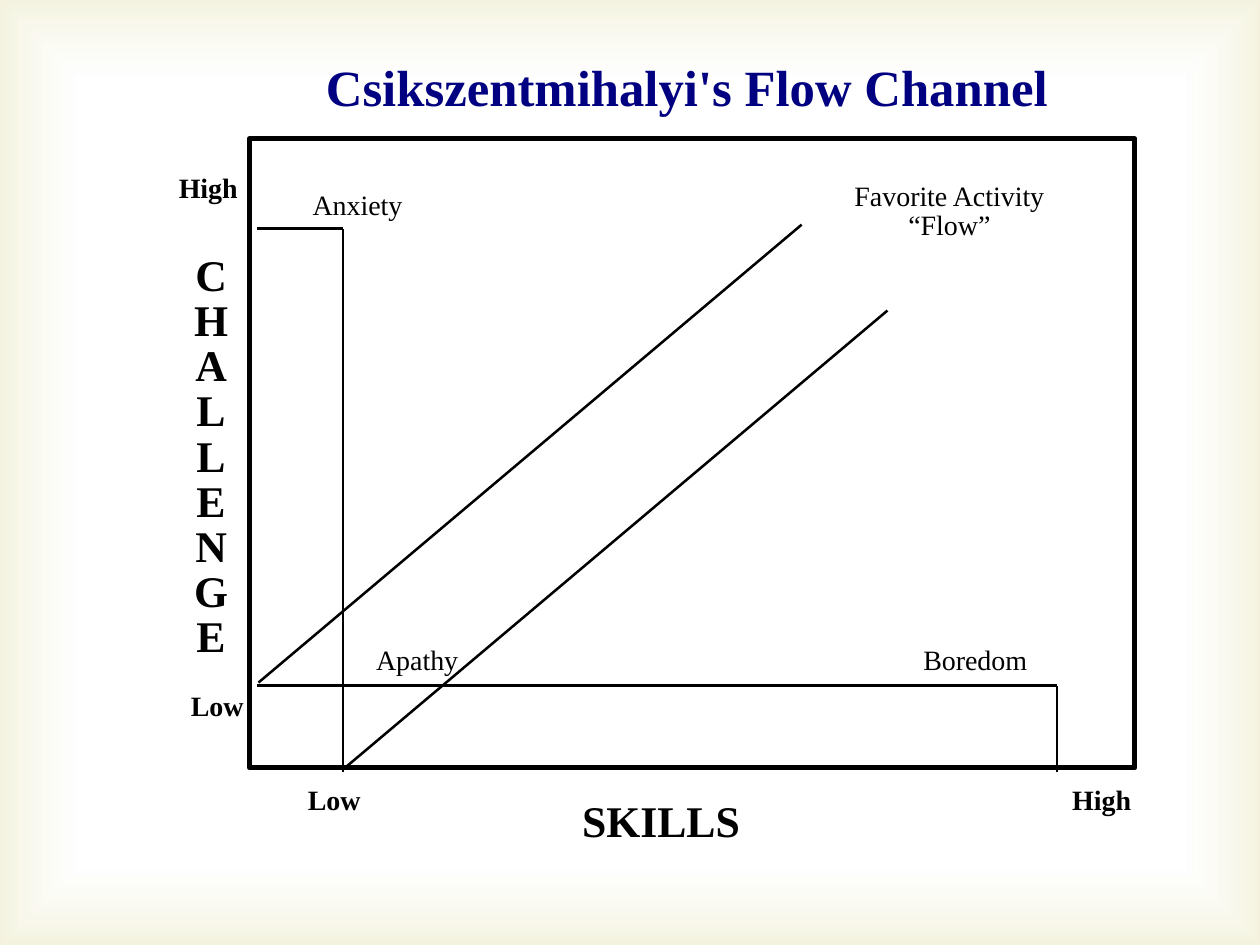
"""Build a slide with a diagram of the flow channel between challenge and skills."""
from lxml import etree
from pptx import Presentation
from pptx.dml.color import RGBColor
from pptx.enum.shapes import MSO_CONNECTOR, MSO_SHAPE
from pptx.enum.text import MSO_ANCHOR, MSO_AUTO_SIZE, PP_ALIGN
from pptx.oxml import parse_xml
from pptx.oxml.ns import qn
from pptx.util import Cm, Pt

STRAIGHT = MSO_CONNECTOR.STRAIGHT
RECTANGLE = MSO_SHAPE.RECTANGLE
MIDDLE = MSO_ANCHOR.MIDDLE
CENTER = PP_ALIGN.CENTER
NO_AUTOFIT = MSO_AUTO_SIZE.NONE

FONT = "Times New Roman"
COLORS = {"title": "000080", "ink": "000000", "paper": "FFFFFF", "edge": "D1CA75"}
WIDTH, HEIGHT = 25.4, 19.05

TITLE = "Csikszentmihalyi's Flow Channel"
TITLE_BOX = (3.2, 1.3, 21.31, 1.04)
FRAME_BOX = (5.03, 2.8, 17.85, 12.68)

LEFT, RIGHT, LOW_SKILL = 5.18, 21.31, 6.91
TOP, BOTTOM, LOW_CHALLENGE = 4.61, 15.57, 13.82
CHANNEL_RUN, CHANNEL_RISE = 10.95, 9.23
CHANNEL_STARTS = [(5.21, 13.76), (6.94, 15.49)]

ZONE_LINES = [
    (LEFT, TOP, LOW_SKILL, TOP),
    (LOW_SKILL, BOTTOM, LOW_SKILL, TOP),
    (LEFT, LOW_CHALLENGE, RIGHT, LOW_CHALLENGE),
    (RIGHT, BOTTOM, RIGHT, LOW_CHALLENGE),
]
CHANNEL_LINES = [(x, y, x + CHANNEL_RUN, y - CHANNEL_RISE) for x, y in CHANNEL_STARTS]

LABELS = [
    ("SKILLS", (11.51, 16.15, 3.63, 0.94), 25, True),
    ("CHALLENGE", (3.81, 5.08, 0.89, 8.33), 25, True),
    ("Low", (5.71, 15.87, 2.06, 0.58), 16, True),
    ("Low", (3.35, 13.97, 2.06, 0.58), 16, True),
    ("High", (3.17, 3.53, 2.06, 0.58), 16, True),
    ("High", (21.18, 15.87, 2.06, 0.58), 16, True),
    ("Boredom", (18.44, 13.06, 2.44, 0.58), 16, False),
    ("Apathy", (7.19, 13.06, 2.44, 0.58), 16, False),
    ("Favorite Activity\v“Flow”", (17.12, 3.68, 4.04, 1.19), 16, False),
    ("Anxiety", (5.99, 3.89, 2.44, 0.58), 16, False),
]

GRADIENT = f"""
<a:gradFill xmlns:a="http://schemas.openxmlformats.org/drawingml/2006/main" rotWithShape="1">
  <a:gsLst>
    <a:gs pos="83000"><a:srgbClr val="{COLORS['paper']}"><a:alpha val="11000"/></a:srgbClr></a:gs>
    <a:gs pos="100000"><a:srgbClr val="{COLORS['edge']}"><a:alpha val="23000"/></a:srgbClr></a:gs>
  </a:gsLst>
  <a:path path="rect"><a:fillToRect l="50000" t="50000" r="50000" b="50000"/></a:path>
</a:gradFill>"""


def color(name):
    return RGBColor.from_string(COLORS[name])


def lengths(values):
    return [Cm(value) for value in values]


def add_rectangle(slide, box):
    shape = slide.shapes.add_shape(RECTANGLE, *lengths(box))
    shape.shadow.inherit = False
    return shape


def add_backdrop(slide):
    backdrop = add_rectangle(slide, (0, 0, WIDTH, HEIGHT))
    backdrop.line.fill.background()
    properties = backdrop._element.spPr
    properties.find(qn("a:prstGeom")).addnext(parse_xml(GRADIENT))
    slide.shapes._spTree.insert(2, backdrop._element)


def add_frame(slide):
    frame = add_rectangle(slide, FRAME_BOX)
    frame.fill.solid()
    frame.fill.fore_color.rgb = color("paper")
    frame.line.color.rgb = color("ink")
    frame.line.width = Pt(2.89)
    etree.SubElement(frame.line._get_or_add_ln(), qn("a:round"))


def add_line(slide, ends):
    line = slide.shapes.add_connector(STRAIGHT, *lengths(ends))
    line.line.color.rgb = color("ink")
    line.line.width = Pt(1.45)
    etree.SubElement(line._element.spPr, qn("a:effectLst"))


def set_text(shape, text, size, bold, color_name):
    frame = shape.text_frame
    frame.text = text
    frame.word_wrap = True
    frame.auto_size = NO_AUTOFIT
    frame.vertical_anchor = MIDDLE
    frame.margin_left = frame.margin_right = frame.margin_top = frame.margin_bottom = 0
    paragraph = frame.paragraphs[0]
    paragraph.alignment = CENTER
    paragraph.line_spacing = 0.86
    paragraph.space_before = Pt(0)
    for run in paragraph.runs:
        run.font.name = FONT
        run.font.size = Pt(size)
        run.font.bold = bold
        run.font.color.rgb = color(color_name)


def main():
    presentation = Presentation()
    presentation.slide_width, presentation.slide_height = Cm(WIDTH), Cm(HEIGHT)
    slide = presentation.slides.add_slide(presentation.slide_layouts[5])
    title = slide.shapes.title
    title.left, title.top, title.width, title.height = lengths(TITLE_BOX)
    set_text(title, TITLE, 29, True, "title")
    add_backdrop(slide)
    add_frame(slide)
    for ends in ZONE_LINES + CHANNEL_LINES:
        add_line(slide, ends)
    for text, box, size, bold in LABELS:
        set_text(slide.shapes.add_textbox(*lengths(box)), text, size, bold, "ink")
    presentation.save("out.pptx")


main()
